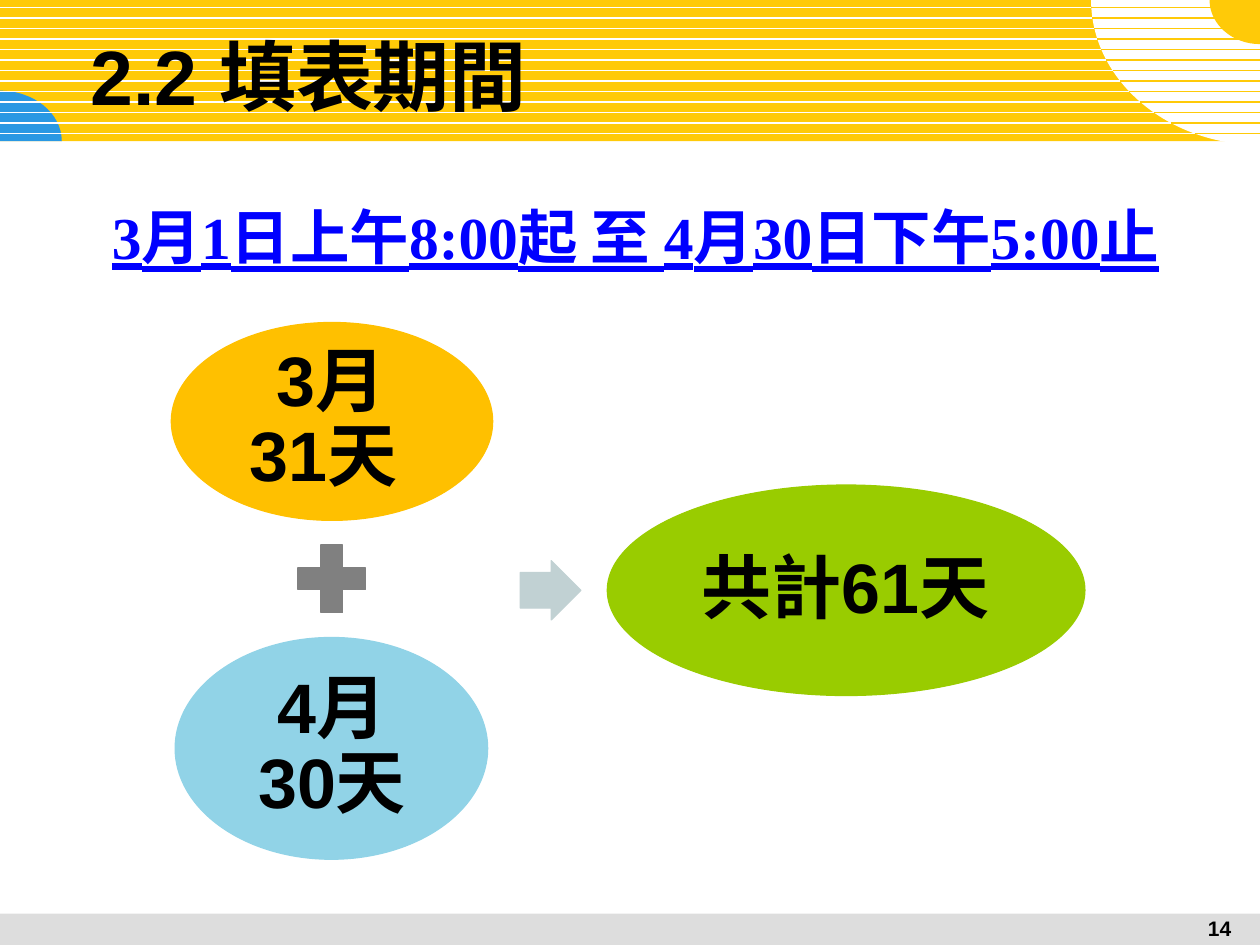
import math
from dataclasses import dataclass

from lxml import etree
from pptx import Presentation
from pptx.dml.color import RGBColor
from pptx.enum.shapes import MSO_CONNECTOR, MSO_SHAPE
from pptx.enum.text import MSO_ANCHOR, MSO_UNDERLINE, PP_ALIGN
from pptx.oxml.ns import qn
from pptx.util import Inches, Pt

RECTANGLE = MSO_SHAPE.RECTANGLE
OVAL = MSO_SHAPE.OVAL
PLUS = MSO_SHAPE.MATH_PLUS
ARROW = MSO_SHAPE.RIGHT_ARROW
STRAIGHT = MSO_CONNECTOR.STRAIGHT
LEFT, CENTER = PP_ALIGN.LEFT, PP_ALIGN.CENTER
TOP, MIDDLE = MSO_ANCHOR.TOP, MSO_ANCHOR.MIDDLE
HEAVY = MSO_UNDERLINE.HEAVY_LINE

YELLOW, WHITE, BLUE = "FFCA08", "FFFFFF", "2998E3"
SLIDE_WIDTH, SLIDE_HEIGHT = 10, 7.5
BANNER_HEIGHT = 1.12
CURVE_WIDTH, CURVE_HEIGHT = 1.34, 1.15
STRIPE_TOP, STRIPE_GAP, STRIPE_COUNT = 0.06, 1 / 12, 13
ARC_PULL = 0.55
CJK_FONT = "Noto Sans CJK SC"
SERIF_FONT = "Times New Roman"


@dataclass(frozen=True)
class Box:
    left: float
    top: float
    width: float
    height: float

    def lengths(self) -> tuple:
        return tuple(map(Inches, (self.left, self.top, self.width, self.height)))


@dataclass(frozen=True)
class Period:
    oval: Box
    label: Box
    text: str
    color: str


PERIODS = [
    Period(Box(1.36, 2.56, 2.55, 1.57), Box(1.73, 2.79, 1.8, 1.11), "3月\n31天 ", "FFC000"),
    Period(Box(1.39, 5.06, 2.48, 1.76), Box(1.76, 5.32, 1.75, 1.24), "4月\n30天", "91D3E7"),
    Period(Box(4.82, 3.85, 3.79, 1.67), Box(5.37, 4.1, 2.68, 1.18), "共計61天", "99CC00"),
]


def rgb(color: str) -> RGBColor:
    return RGBColor.from_string(color)


def paint(shape, color: str, outlined: bool = False) -> None:
    shape.shadow.inherit = False
    shape.fill.solid()
    shape.fill.fore_color.rgb = rgb(color)
    if outlined:
        shape.line.color.rgb = rgb(color)
        shape.line.width = Pt(0.75)
    else:
        shape.line.fill.background()


def add_figure(slide, kind, box: Box, color: str, outlined: bool = False):
    figure = slide.shapes.add_shape(kind, *box.lengths())
    paint(figure, color, outlined)
    return figure


def add_quarter(slide, center_x: float, center_y: float, reach_x: float, reach_y: float, color: str) -> None:
    center = Inches(center_x), Inches(center_y)
    side = Inches(center_x + reach_x), Inches(center_y)
    end = Inches(center_x), Inches(center_y + reach_y)
    builder = slide.shapes.build_freeform(*side)
    builder.add_line_segments([end, center], close=True)
    quarter = builder.convert_to_shape()
    paint(quarter, color)

    outline = quarter._element.spPr.find(".//" + qn("a:path"))
    start_point = outline.find(qn("a:moveTo"))[0]
    arc = outline.find(qn("a:lnTo"))
    end_point = arc[0]
    x0, y0 = (int(start_point.get(axis)) for axis in "xy")
    x1, y1 = (int(end_point.get(axis)) for axis in "xy")
    controls = [
        (x0, round(y0 + ARC_PULL * (y1 - y0))),
        (round(x1 + ARC_PULL * (x0 - x1)), y1),
    ]
    curve = etree.Element(qn("a:cubicBezTo"))
    for x, y in [*controls, (x1, y1)]:
        etree.SubElement(curve, qn("a:pt"), x=str(x), y=str(y))
    outline.replace(arc, curve)


def add_stripe(slide, start: float, y: float, color: str, weight: float) -> None:
    stripe = slide.shapes.add_connector(
        STRAIGHT, Inches(start), Inches(y), Inches(SLIDE_WIDTH), Inches(y)
    )
    stripe.line.color.rgb = rgb(color)
    stripe.line.width = Pt(weight)
    etree.SubElement(stripe._element.spPr, qn("a:effectLst"))


def add_paragraph(slide, box: Box, *, align=CENTER, anchor=TOP,
                  inset: float | None = None, spacing: float = 1.0):
    frame = slide.shapes.add_textbox(*box.lengths()).text_frame
    frame.word_wrap = True
    frame.vertical_anchor = anchor
    if inset is not None:
        frame.margin_left = frame.margin_right = Inches(inset)
        frame.margin_top = frame.margin_bottom = Inches(inset)
    paragraph = frame.paragraphs[0]
    paragraph.alignment = align
    paragraph.line_spacing = spacing
    return paragraph


def write(paragraph, text: str, *, size: float, font: str = "Arial",
          color: str = "000000", bold: bool = True, underline=None) -> None:
    for index, line in enumerate(text.split("\n")):
        if index:
            paragraph.add_line_break()
            mark = etree.SubElement(paragraph._p.findall(qn("a:br"))[-1], qn("a:rPr"))
            mark.set("sz", str(int(size * 100)))
        run = paragraph.add_run()
        run.text = line
        run.font.size = Pt(size)
        run.font.bold = bold
        run.font.underline = underline
        run.font.name = font
        run.font.color.rgb = rgb(color)
        east_asian = etree.SubElement(run.font._element, qn("a:ea"))
        east_asian.set("typeface", CJK_FONT)


def draw_background(slide) -> None:
    stripes = [STRIPE_TOP + STRIPE_GAP * i for i in range(STRIPE_COUNT)]
    add_figure(slide, RECTANGLE, Box(0, 0, SLIDE_WIDTH, BANNER_HEIGHT), YELLOW)
    add_quarter(slide, 0, BANNER_HEIGHT, 0.49, -0.4, BLUE)
    for y in stripes:
        add_stripe(slide, 0, y, WHITE, 1)
    add_quarter(slide, SLIDE_WIDTH, 0, -CURVE_WIDTH, CURVE_HEIGHT, WHITE)
    for y in stripes:
        curve_edge = SLIDE_WIDTH - CURVE_WIDTH * math.sqrt(1 - (y / CURVE_HEIGHT) ** 2)
        add_stripe(slide, curve_edge, y, YELLOW, 0.75)
    add_figure(slide, RECTANGLE, Box(0, 7.25, SLIDE_WIDTH, 0.25), "DDDDDD")
    add_quarter(slide, SLIDE_WIDTH, 0, -0.4, 0.35, YELLOW)


def main() -> None:
    deck = Presentation()
    deck.slide_width, deck.slide_height = Inches(SLIDE_WIDTH), Inches(SLIDE_HEIGHT)
    slide = deck.slides.add_slide(deck.slide_layouts[6])

    draw_background(slide)
    page_number = add_paragraph(slide, Box(9.36, 7.22, 0.64, 0.28))
    write(page_number, "14", size=12)

    title = add_paragraph(slide, Box(0.62, 0.26, 7.76, 0.67), align=LEFT, anchor=MIDDLE)
    write(title, "2.2 ", size=44)
    write(title, "填表期間", size=44, font=CJK_FONT)

    dates = add_paragraph(slide, Box(0.61, 1.54, 8.75, 0.67))
    write(dates, " ", size=34, font=SERIF_FONT, color="0000FF", bold=False)
    write(dates, "3月1日上午8:00起 至 4月30日下午5:00止", size=34, font=SERIF_FONT,
          color="0000FF", underline=HEAVY)

    for period in PERIODS:
        add_figure(slide, OVAL, period.oval, period.color, outlined=True)
        label = add_paragraph(slide, period.label, anchor=MIDDLE, inset=0.06, spacing=0.9)
        write(label, period.text, size=40)
    add_figure(slide, PLUS, Box(2.27, 4.23, 0.73, 0.73), "808080", outlined=True)
    total_arrow = add_figure(slide, ARROW, Box(4.13, 4.45, 0.48, 0.47), "C1D1D3", outlined=True)
    total_arrow.adjustments[0] = 0.6

    deck.save("out.pptx")


if __name__ == "__main__":
    main()
